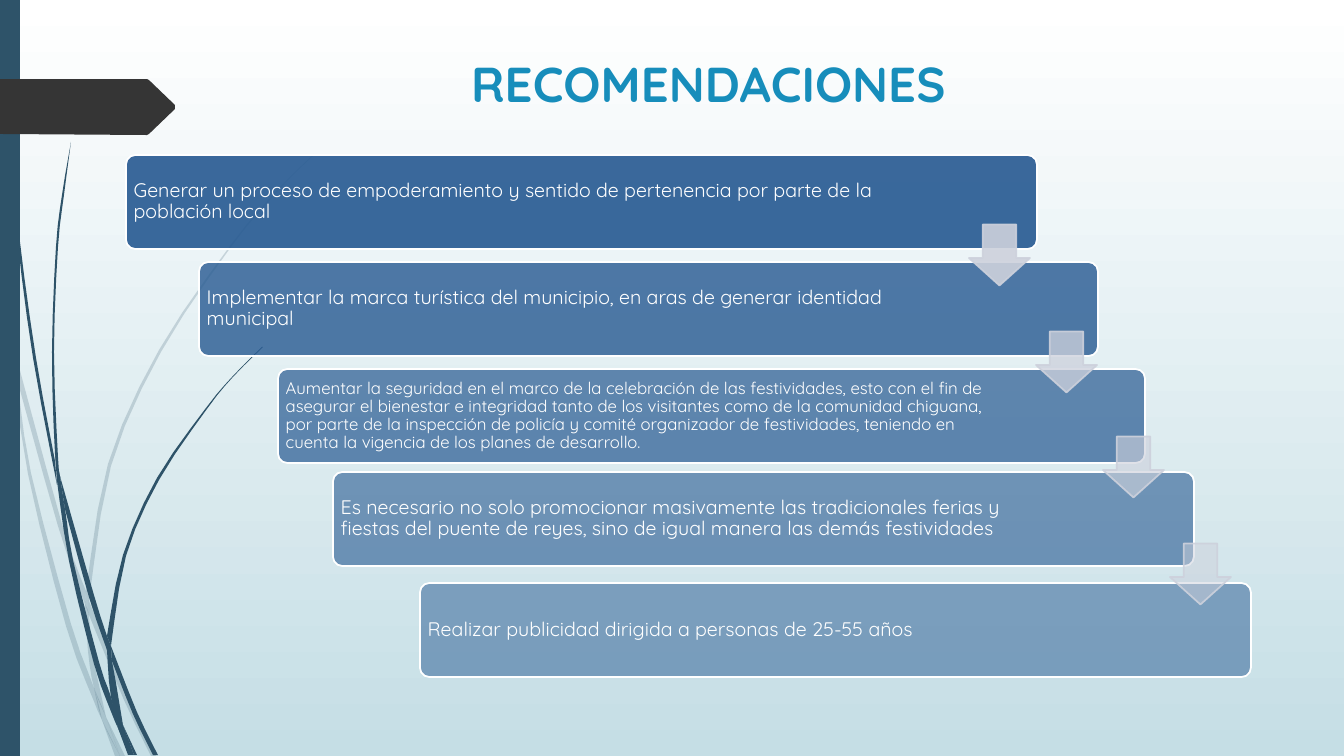
import dataclasses

import lxml.etree
import pptx
import pptx.dml.color
import pptx.enum.shapes
import pptx.enum.text
import pptx.oxml.ns
import pptx.util

SLIDE_W, SLIDE_H = 1344, 756
EMU_PER_PX = 12192000 / SLIDE_W
SHAPE = pptx.enum.shapes.MSO_SHAPE
ALIGN = pptx.enum.text.PP_ALIGN
ANCHOR = pptx.enum.text.MSO_ANCHOR


@dataclasses.dataclass(frozen=True)
class Theme:
    font: str = "Quicksand"
    white: str = "FFFFFF"
    sky: str = "C5DEE5"
    reed: str = "2E5369"
    tag: str = "353535"
    title: str = "178DBB"
    card: str = "265991"
    arrow: str = "CDD1DC"
    title_size: int = 35
    body_size: int = 14
    small_size: int = 12
    line_width: float = 1.25


THEME = Theme()

# Each blade of reed is one edge and the way back along the other edge.
LIGHT_BLADES = [
    ([(0, 284), (9, 325), (11, 353)], [(10, 347), (0, 301)]),
    ([(14, 348), (62, 524), (86, 591)], [(85, 604), (58, 526), (17, 379)]),
    ([(89, 601), (128, 698), (156, 756)], [(151, 756), (124, 700), (89, 615)]),
    ([(106, 717), (125, 756)], [(120, 756)]),
    ([(11, 353), (17, 379), (31, 473), (71, 624), (94, 688), (102, 720)],
     [(102, 720), (93, 699), (66, 626), (28, 474), (11, 353)]),
    ([(85, 604), (89, 615), (92, 651), (106, 717)],
     [(106, 717), (94, 688), (88, 651), (85, 604)]),
    ([(314, 154), (291, 176), (270, 198), (230, 246), (159, 350), (108, 464), (86, 591)],
     [(89, 601), (111, 466), (161, 352), (231, 247), (270, 200), (292, 176), (314, 155)]),
    ([(102, 720), (120, 756)], [(115, 756)]),
    ([(89, 615), (89, 601)], [(86, 591), (85, 604)]),
    ([(94, 688), (106, 717), (120, 756)], [(120, 756), (102, 720), (94, 688)]),
]
DARK_BLADES = [
    ([(3, 0), (5, 48), (7, 111), (17, 235), (33, 358), (57, 485)],
     [(55, 461), (36, 358), (19, 234), (8, 110), (5, 48), (4, 0)]),
    ([(60, 476), (94, 595), (107, 636)], [(107, 650), (89, 597), (65, 509)]),
    ([(111, 646), (137, 712), (158, 755)], [(153, 755), (133, 714), (112, 661)]),
    ([(57, 481), (65, 509), (73, 560), (99, 662), (111, 697), (118, 728)],
     [(118, 728), (112, 714), (94, 664), (69, 561), (57, 481)]),
    ([(71, 142), (62, 195), (56, 247), (52, 352), (55, 453), (60, 476)],
     [(60, 476), (58, 457), (54, 352), (58, 247), (64, 195), (71, 142)]),
    ([(123, 725), (137, 755)], [(134, 755)]),
    ([(60, 476), (65, 509)], [(57, 481), (55, 453)]),
    ([(262, 347), (233, 376), (206, 408), (157, 478), (123, 555), (107, 636)],
     [(111, 646), (126, 556), (159, 480), (207, 409), (233, 377), (263, 347)]),
    ([(118, 728), (132, 755)], [(128, 755)]),
    ([(107, 650), (112, 661), (123, 725)], [(123, 725), (111, 697), (107, 650)]),
    ([(111, 646), (112, 661)], [(107, 650), (107, 636)]),
    ([(111, 697), (123, 725), (134, 755)], [(131, 755), (118, 728), (111, 697)]),
]
TAG = [(0, 79), (147, 79), (149, 80), (175, 105), (175, 109), (149, 134),
       (147, 135), (0, 134)]

# Left, top and width inside the staircase, type size, wording.
CARDS = [
    (0, 0, 911, THEME.body_size,
     "Generar un proceso de empoderamiento y sentido de pertenencia por parte "
     "de la población local"),
    (73, 107, 899, THEME.body_size,
     "Implementar la marca turística del municipio, en aras de generar "
     "identidad municipal"),
    (152, 214, 867, THEME.small_size,
     "Aumentar la seguridad en el marco de la celebración de las festividades, "
     "esto con el fin de asegurar el bienestar e integridad tanto de los "
     "visitantes como de la comunidad chiguana, por parte de la inspección de "
     "policía y comité organizador de festividades, teniendo en cuenta la "
     "vigencia de los planes de desarrollo."),
    (207, 317, 861, THEME.body_size,
     "Es necesario no solo promocionar masivamente las tradicionales ferias y "
     "fiestas del puente de reyes, sino de igual manera las demás festividades"),
    (294, 428, 831, THEME.body_size,
     "Realizar publicidad dirigida a personas de 25-55 años"),
]
CARD_H = 94
ARROW = 61


def px(n):
    return pptx.util.Emu(round(n * EMU_PER_PX))


def rgb(value):
    return pptx.dml.color.RGBColor.from_string(value)


def set_attrs(obj, values):
    for name, value in values.items():
        setattr(obj, name, value)


def paint(sp, fill, alpha=100, line=None, line_alpha=100):
    """Give a shape a flat fill and line; alpha values are percent opaque."""
    sp.shadow.inherit = False
    sp.fill.solid()
    sp.fill.fore_color.rgb = rgb(fill)
    if line:
        sp.line.color.rgb = rgb(line)
        sp.line.width = pptx.util.Pt(THEME.line_width)
    else:
        sp.line.fill.background()
    for color in sp.element.spPr.iter(pptx.oxml.ns.qn("a:srgbClr")):
        in_line = color.getparent().getparent().tag == pptx.oxml.ns.qn("a:ln")
        opacity = line_alpha if in_line else alpha
        if opacity < 100:
            lxml.etree.SubElement(color, pptx.oxml.ns.qn("a:alpha"),
                                  val=str(round(opacity * 1000)))


def add_preset(slide, kind, box, adjustments=()):
    sp = slide.shapes.add_shape(kind, *map(px, box))
    for i, value in enumerate(adjustments):
        sp.adjustments[i] = value
    return sp


def add_outline(slide, points):
    start, *rest = [(px(x), px(y)) for x, y in points]
    builder = slide.shapes.build_freeform(*start)
    builder.add_line_segments(rest, close=True)
    return builder.convert_to_shape()


def write(tf, text, size, color, bold=False):
    p = tf.paragraphs[0]
    r = p.add_run()
    r.text = text
    set_attrs(r.font, {"name": THEME.font, "size": pptx.util.Pt(size), "bold": bold})
    r.font.color.rgb = rgb(color)
    return p


def smooth(points, steps=3):
    """Return points along a Catmull-Rom curve through the given points."""
    if len(points) < 3:
        return points
    padded = [points[0], *points, points[-1]]
    curve = [points[0]]
    for a, b, c, d in zip(padded, padded[1:], padded[2:], padded[3:]):
        for t in (k / steps for k in range(1, steps + 1)):
            curve.append(tuple(
                q + t / 2 * (r - p + t * (2*p - 5*q + 4*r - s + t * (3*q - p - 3*r + s)))
                for p, q, r, s in zip(a, b, c, d)))
    return curve


def add_backdrop(slide):
    fill = slide.background.fill
    fill.gradient()
    fill.gradient_angle = 270
    for i, (stop, color) in enumerate(zip(fill.gradient_stops, (THEME.white, THEME.sky))):
        stop.position = i
        stop.color.rgb = rgb(color)
    for blades, alpha in ((LIGHT_BLADES, 20), (DARK_BLADES, 100)):
        for edge, way_back in blades:
            sp = add_outline(slide, smooth(edge) + smooth(way_back))
            paint(sp, THEME.reed, alpha)
    paint(add_preset(slide, SHAPE.RECTANGLE, (0, 0, 20, SLIDE_H)), THEME.reed)
    paint(add_outline(slide, TAG), THEME.tag)


def add_title(slide, box, text):
    tf = slide.shapes.add_textbox(*map(px, box)).text_frame
    tf.word_wrap = False
    p = write(tf, text, THEME.title_size, THEME.title, bold=True)
    p.alignment = ALIGN.CENTER


def add_card(slide, box, size, text, alpha):
    sp = add_preset(slide, SHAPE.ROUNDED_RECTANGLE, box, [0.1])
    paint(sp, THEME.card, alpha, THEME.white)
    tf = sp.text_frame
    set_attrs(tf, {"word_wrap": True, "vertical_anchor": ANCHOR.MIDDLE,
                   "margin_left": px(5), "margin_right": px(box[2] * 0.15),
                   "margin_top": px(6), "margin_bottom": px(6)})
    p = write(tf, text, size, THEME.white)
    set_attrs(p, {"alignment": ALIGN.LEFT, "line_spacing": 0.9})


def add_staircase(slide, left, top):
    """Place the cards, then an arrow centred on each gap between two cards."""
    for i, (x, y, w, size, text) in enumerate(CARDS):
        add_card(slide, (left + x, top + y, w, CARD_H), size, text, 90 - 10 * i)
    for i, (upper, lower) in enumerate(zip(CARDS, CARDS[1:])):
        middle = top + (upper[1] + CARD_H + lower[1] - 1) / 2
        box = (left + 843 + 67 * i, middle - ARROW / 2, ARROW, ARROW)
        sp = add_preset(slide, SHAPE.DOWN_ARROW, box, [0.55, 0.45])
        paint(sp, THEME.arrow, 90 - 40 * i / 3, THEME.arrow, 90)


def main():
    prs = pptx.Presentation()
    set_attrs(prs, {"slide_width": px(SLIDE_W), "slide_height": px(SLIDE_H)})
    slide = prs.slides.add_slide(prs.slide_layouts[6])
    add_backdrop(slide)
    add_title(slide, (451, 49, 515, 70), "RECOMENDACIONES")
    add_staircase(slide, 126, 155)
    prs.save("out.pptx")


if __name__ == "__main__":
    main()
